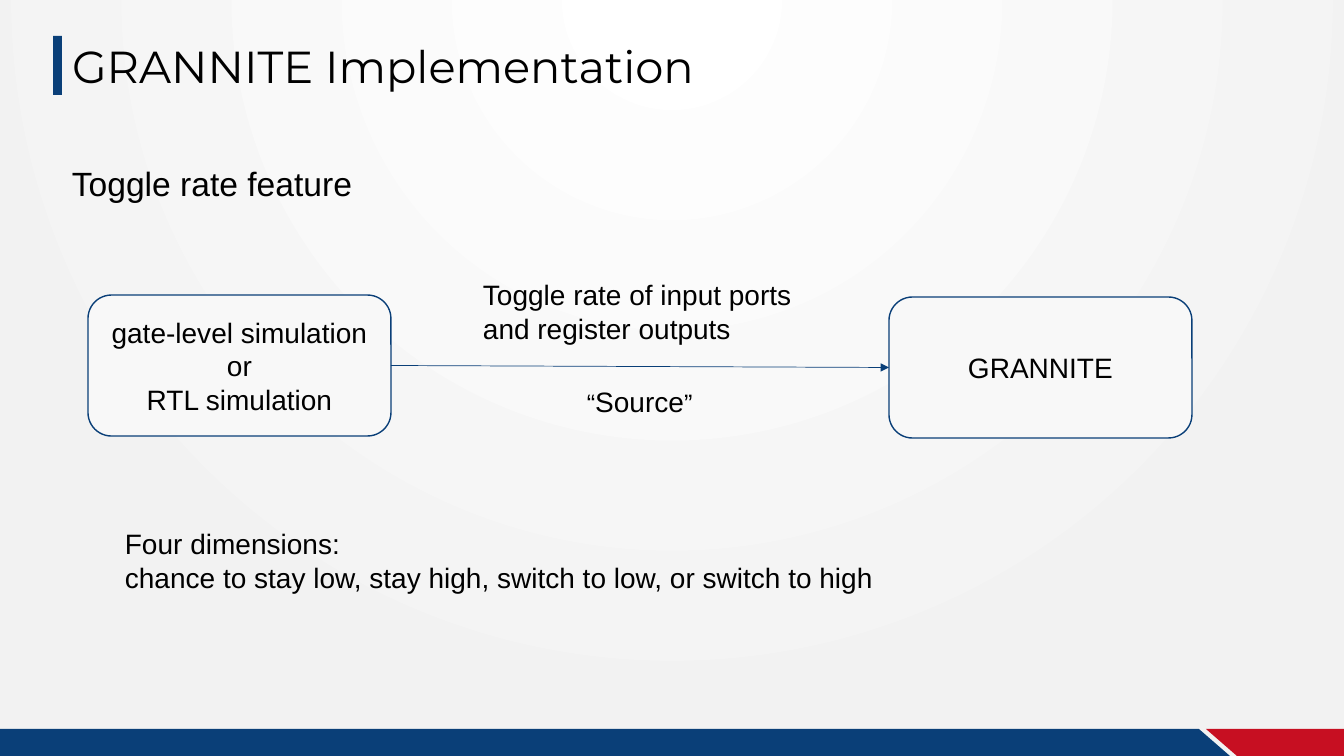
import pptx
import pptx.util
import pptx.oxml
import pptx.oxml.ns
from pptx.dml.color import RGBColor
from pptx.enum.shapes import MSO_CONNECTOR, MSO_SHAPE
from pptx.enum.text import MSO_ANCHOR, MSO_AUTO_SIZE, PP_ALIGN

# Content; lengths in px, areas as left, top, width, height
SCALE = 12192000 / 1344
WIDTH, HEIGHT = 1344, 756
BLUE = RGBColor(0x0A, 0x3F, 0x78)
RED = RGBColor(0xC7, 0x0F, 0x22)
PALE = RGBColor(0xF8, 0xF8, 0xF8)
BLACK = RGBColor(0, 0, 0)

TITLE = ("GRANNITE Implementation", (62, 34, 907, 65))
ACCENT_BAR = (53, 36, 9, 59)
FOOTER_BANDS = [
    (BLUE, [(0, 729), (1199, 729), (1230, 756), (0, 756)]),
    (RED, [(1344, 756), (1237, 756), (1206, 729), (1344, 729)]),
]
BOX_SIZE = (303, 141)
FLOW_BOXES = [
    ((88, 295), ["gate-level simulation", "or", "RTL simulation"]),
    ((889, 297), ["GRANNITE"]),
]
# lines, area, size in points, wrap
LABELS = [
    (["Toggle rate feature"], (62, 158, 303, 50), 24, False),
    (["Toggle rate of input ports and register outputs"], (473, 273, 335, 78), 20, True),
    (["Four dimensions:",
      "chance to stay low, stay high, switch to low, or switch to high"],
     (115, 522, 774, 78), 20, False),
]
SOURCE_RUNS = [("“", 18), ("Source", 20), ("”", 18)]
SOURCE_AREA = (577, 380, 127, 44)

BACKGROUND = """<p:bg %s><p:bgPr><a:gradFill rotWithShape="1"><a:gsLst>
<a:gs pos="0"><a:srgbClr val="FFFFFF"/></a:gs>
<a:gs pos="100000"><a:srgbClr val="F2F2F2"/></a:gs></a:gsLst>
<a:path path="circle"><a:fillToRect l="50000" t="-80000" r="50000" b="180000"/></a:path>
</a:gradFill><a:effectLst/></p:bgPr></p:bg>""" % pptx.oxml.ns.nsdecls("p", "a")


def px(*lengths):
    return [pptx.util.Emu(round(length * SCALE)) for length in lengths]


def style_font(font, size, name="Arial"):
    font.name = name
    font.size = pptx.util.Pt(size)
    font.color.rgb = BLACK


def write_lines(frame, lines, size, align=PP_ALIGN.LEFT):
    for index, line in enumerate(lines):
        para = frame.add_paragraph() if index else frame.paragraphs[0]
        para.text = line
        para.alignment = align
        style_font(para.font, size)


def paint(shape, color):
    shape.shadow.inherit = False
    shape.fill.solid()
    shape.fill.fore_color.rgb = color
    shape.line.fill.background()


def add_label(area, wrap):
    frame = page.shapes.add_textbox(*px(*area)).text_frame
    frame.word_wrap = wrap
    return frame


deck = pptx.Presentation()
deck.slide_width, deck.slide_height = px(WIDTH, HEIGHT)
page = deck.slides.add_slide(deck.slide_layouts[5])
page._element.cSld.insert(0, pptx.oxml.parse_xml(BACKGROUND))

# Footer bands and accent bar
for color, points in FOOTER_BANDS:
    outline = page.shapes.build_freeform(*points[0], scale=SCALE)
    outline.add_line_segments(points[1:], close=True)
    paint(outline.convert_to_shape(), color)
paint(page.shapes.add_shape(MSO_SHAPE.RECTANGLE, *px(*ACCENT_BAR)), BLUE)

# Title
title = page.shapes.title
title.left, title.top, title.width, title.height = px(*TITLE[1])
title.text_frame.text = TITLE[0]
title.text_frame.auto_size = MSO_AUTO_SIZE.NONE
title.text_frame.vertical_anchor = MSO_ANCHOR.TOP
title.text_frame.paragraphs[0].alignment = PP_ALIGN.LEFT
style_font(title.text_frame.paragraphs[0].font, 32, "Montserrat")

# Flow boxes
boxes = []
for corner, lines in FLOW_BOXES:
    box = page.shapes.add_shape(MSO_SHAPE.ROUNDED_RECTANGLE, *px(*corner, *BOX_SIZE))
    paint(box, PALE)
    box.line.color.rgb = BLUE
    box.line.width = pptx.util.Pt(1)
    box.text_frame.word_wrap = True
    box.text_frame.vertical_anchor = MSO_ANCHOR.MIDDLE
    write_lines(box.text_frame, lines, 20, PP_ALIGN.CENTER)
    boxes.append(box)

# Arrow from simulation to GRANNITE
arrow = page.shapes.add_connector(MSO_CONNECTOR.STRAIGHT, 0, 0, 0, 0)
arrow.begin_connect(boxes[0], 3)
arrow.end_connect(boxes[1], 1)
arrow.line.color.rgb = BLUE
arrow.line.width = pptx.util.Pt(0.5)
arrow_line = arrow.line._get_or_add_ln()
arrow_line.append(pptx.oxml.parse_xml(
    '<a:tailEnd %s type="triangle"/>' % pptx.oxml.ns.nsdecls("a")))
arrow_line.addnext(pptx.oxml.parse_xml("<a:effectLst %s/>" % pptx.oxml.ns.nsdecls("a")))

# Labels
for lines, area, size, wrap in LABELS:
    write_lines(add_label(area, wrap), lines, size)

source_para = add_label(SOURCE_AREA, False).paragraphs[0]
for text, size in SOURCE_RUNS:
    span = source_para.add_run()
    span.text = text
    style_font(span.font, size)

deck.save("out.pptx")
